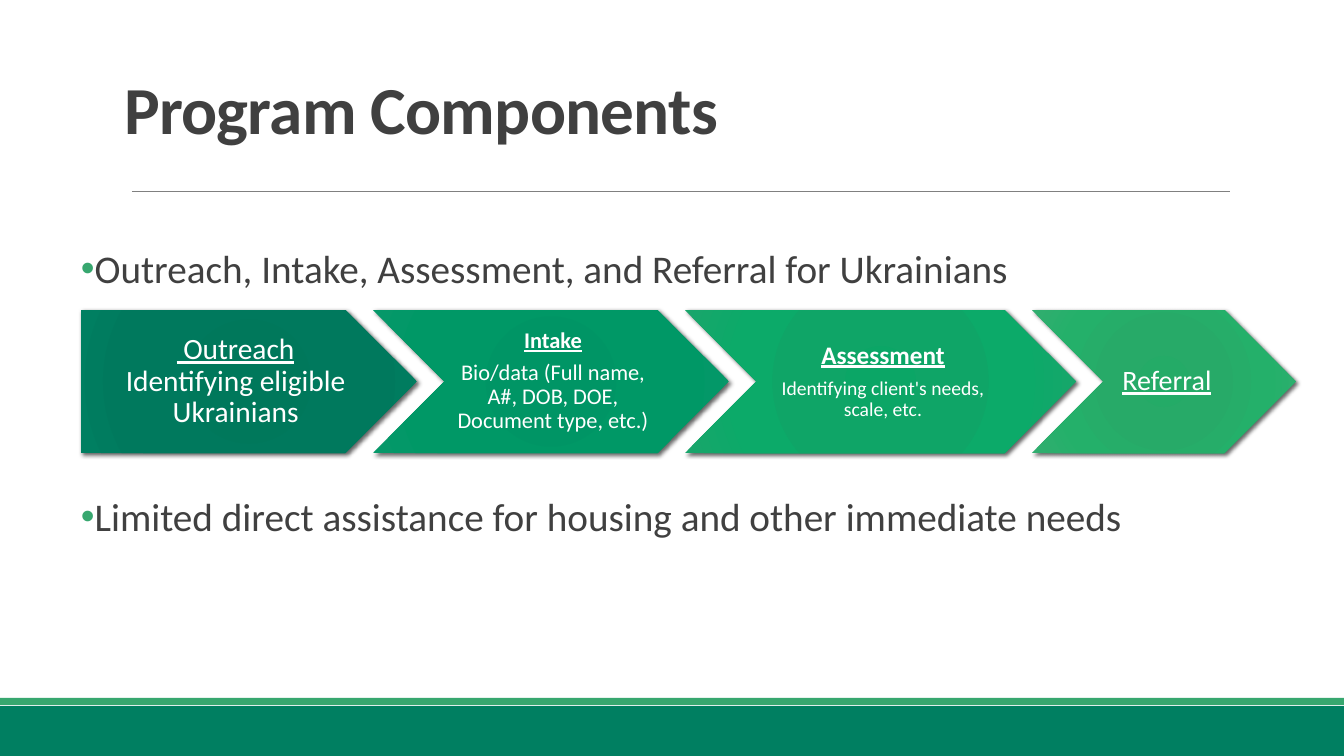
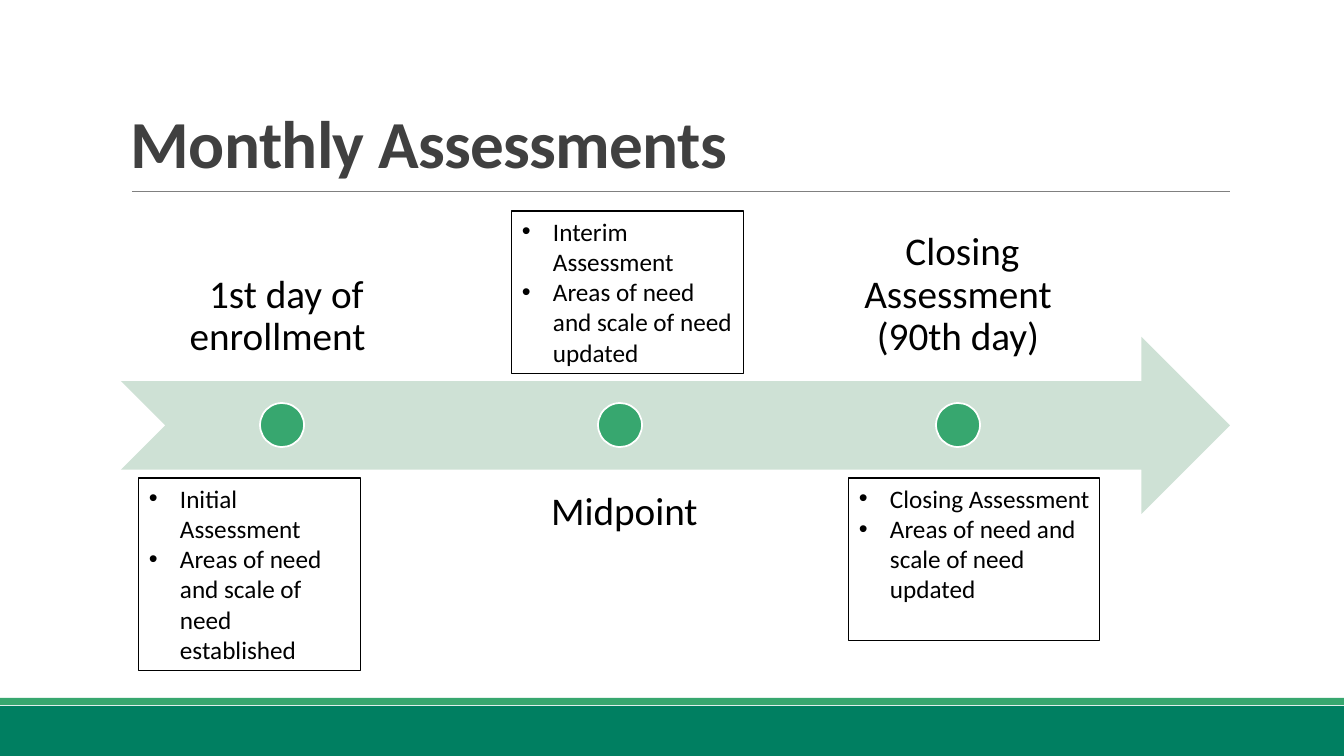
from dataclasses import dataclass

from lxml.etree import SubElement
from pptx import Presentation
from pptx.dml.color import RGBColor
from pptx.enum.shapes import MSO_CONNECTOR, MSO_SHAPE
from pptx.enum.text import MSO_ANCHOR, MSO_AUTO_SIZE, PP_ALIGN
from pptx.oxml import parse_xml
from pptx.oxml.ns import nsdecls, qn
from pptx.util import Emu, Pt


@dataclass(frozen=True)
class Theme:
    font: str = "Calibri"
    bullet_font: str = "Arial"
    ink: str = "404040"
    black: str = "000000"
    white: str = "FFFFFF"
    rule: str = "808080"
    dark: str = "007F61"
    accent: str = "37A76F"
    pale: str = "CEE1D5"
    title_size: int = 48
    body_size: int = 28
    note_size: int = 18
    tight: float = 0.9
    after_ratio: float = 0.35


THEME = Theme()
PAGE_WIDTH, PAGE_HEIGHT = 1344, 756
EMU_PER_PX = 12192000 / PAGE_WIDTH
MARGIN_LEFT, CONTENT_WIDTH = 121, 1109


@dataclass(frozen=True)
class Step:
    width: int
    inset: int
    gradient: tuple
    lines: tuple  # (text, format) pairs


STEPS = (
    Step(336, 12, ("00765A", "00785B", "00795D", "007F61"), (
        (" Outreach", dict(size=21, underline=True, after=0)),
        ("Identifying eligible Ukrainians", dict(size=21)))),
    Step(356, 7, ("009464", "009565", "009866", "069869"), (
        ("Intake", dict(size=16, bold=True, underline=True)),
        ("Bio/data (Full name, A#, DOB, DOE, Document type, etc.)", dict(size=16)))),
    Step(391, 8, ("0BA666", "0FA567", "0CAA69", "19A56B"), (
        ("Assessment", dict(size=18, bold=True, underline=True)),
        ("Identifying client's needs, scale, etc.", dict(size=14)))),
    Step(264, 9, ("24AB67", "27AA68", "24B06A", "31AD6F"), (
        ("Referral", dict(size=20, underline=True)),)),
)

# Label, then the note's box and its items
MILESTONES = (
    (" 1st day of enrollment ", (139, 478, 222, 193),
     ("Initial Assessment", "Areas of need and scale of need established")),
    (" Midpoint", (512, 211, 232, 163),
     ("Interim Assessment", "Areas of need and scale of need updated")),
    (" Closing Assessment (90th day)", (849, 478, 251, 163),
     ("Closing Assessment", "Areas of need and scale of need updated")),
)


def px(length):
    return Emu(round(length * EMU_PER_PX))


def rgb(color):
    return RGBColor.from_string(color)


# Text
def set_frame(frame, anchor=MSO_ANCHOR.TOP, insets=(10, 5, 10, 5)):
    frame.word_wrap = True
    frame.vertical_anchor = anchor
    (frame.margin_left, frame.margin_top,
     frame.margin_right, frame.margin_bottom) = map(px, insets)
    return frame


def write(frame, text, size=THEME.body_size, color=THEME.black, bold=False,
          underline=False, align=PP_ALIGN.LEFT, line=1.0, after=0,
          tracking=0, hang=0, bullet_color=None):
    """Add a paragraph to the frame; a hang gives it a bullet."""
    para = frame.paragraphs[0]
    if para.runs:
        para = frame.add_paragraph()
    para.alignment = align
    para.line_spacing = line
    para.space_before = Pt(0)
    para.space_after = Pt(after)
    span = para.add_run()
    span.text = text
    font = span.font
    font.name, font.size = THEME.font, Pt(size)
    font.bold, font.underline = bold, underline
    font.color.rgb = rgb(color)
    if tracking:
        font._element.set("spc", str(tracking))
    if hang:
        format_element = para._p.get_or_add_pPr()
        format_element.set("marL", str(px(hang)))
        format_element.set("indent", str(-px(hang)))
        tint = SubElement(format_element, qn("a:buClr"))
        SubElement(tint, qn("a:srgbClr")).set("val", bullet_color or color)
        SubElement(format_element, qn("a:buFont")).set("typeface", THEME.bullet_font)
        SubElement(format_element, qn("a:buChar")).set("char", "•")


def add_text(page, area, text, anchor=MSO_ANCHOR.TOP, insets=(10, 5, 10, 5), **style):
    box = page.shapes.add_textbox(*map(px, area))
    write(set_frame(box.text_frame, anchor, insets), text, **style)


# Shapes
def add_shape(page, kind, area, fill=None, line=None, line_width=0.75):
    shape = page.shapes.add_shape(kind, *map(px, area))
    shape.shadow.inherit = False
    if fill:
        shape.fill.solid()
        shape.fill.fore_color.rgb = rgb(fill)
    else:
        shape.fill.background()
    if line:
        shape.line.color.rgb = rgb(line)
        shape.line.width = Pt(line_width)
    else:
        shape.line.fill.background()
    return shape


def add_radial_gradient(shape, colors):
    stops = "".join(
        f'<a:gs pos="{position}000"><a:srgbClr val="{color}"/></a:gs>'
        for position, color in zip((0, 34, 70, 100), colors))
    gradient = parse_xml(
        f'<a:gradFill {nsdecls("a")} rotWithShape="1"><a:gsLst>{stops}</a:gsLst>'
        '<a:path path="circle"><a:fillToRect l="100000" t="100000" r="100000" '
        'b="100000"/></a:path></a:gradFill>')
    properties = shape._element.spPr
    properties.replace(properties.find(qn("a:noFill")), gradient)


def add_drop_shadow(shape):
    effects = shape._element.spPr.find(qn("a:effectLst"))
    effects.append(parse_xml(
        f'<a:outerShdw {nsdecls("a")} blurRad="{Pt(3)}" dist="{Pt(2)}" dir="2700000" '
        f'rotWithShape="0"><a:srgbClr val="{THEME.black}"><a:alpha val="60000"/>'
        '</a:srgbClr></a:outerShdw>'))


def add_rule(page, left, right, y):
    rule = page.shapes.add_connector(
        MSO_CONNECTOR.STRAIGHT, px(left), px(y), px(right), px(y))
    rule.line.color.rgb = rgb(THEME.rule)
    rule.line.width = Pt(0.5)
    SubElement(rule._element.spPr, qn("a:effectLst"))


# Shared page: footer bands, rule and title
def add_page(deck, title, title_left, title_bottom):
    page = deck.slides.add_slide(deck.slide_layouts[6])
    add_shape(page, MSO_SHAPE.RECTANGLE, (0, 706, PAGE_WIDTH, 50), THEME.dark)
    add_shape(page, MSO_SHAPE.RECTANGLE, (0, 698, PAGE_WIDTH, 7), THEME.accent)
    add_rule(page, 132, 1230, 191)
    add_text(page, (title_left, title_bottom - 140, CONTENT_WIDTH, 140), title,
             anchor=MSO_ANCHOR.BOTTOM, size=THEME.title_size, color=THEME.ink,
             bold=True, line=0.85, tracking=-50)
    return page


# Process steps
def add_steps(page, left, top, height, overlap):
    for index, step in enumerate(STEPS):
        kind = MSO_SHAPE.CHEVRON if index else MSO_SHAPE.PENTAGON
        shape = add_shape(page, kind, (left, top, step.width, height))
        add_radial_gradient(shape, step.gradient)
        add_drop_shadow(shape)
        frame = set_frame(shape.text_frame, MSO_ANCHOR.MIDDLE, (step.inset, 5, 3, 5))
        for text, style in step.lines:
            spacing = dict(after=round(THEME.after_ratio * step.lines[0][1]["size"], 1))
            write(frame, text, color=THEME.white, align=PP_ALIGN.CENTER,
                  line=THEME.tight, **(spacing | style))
        left += step.width - overlap


# Timeline
def add_milestones(page, pitch, width, height, dot):
    middle = 425
    for index, (label, note_area, items) in enumerate(MILESTONES):
        left = MARGIN_LEFT + index * pitch
        above = index % 2 == 0
        add_text(page, (left, 204 if above else 470, width, height), label,
                 anchor=MSO_ANCHOR.BOTTOM if above else MSO_ANCHOR.TOP,
                 insets=(22, 22, 22, 22), align=PP_ALIGN.CENTER, line=THEME.tight)
        add_shape(page, MSO_SHAPE.OVAL,
                  (left + (width - dot) // 2, middle - dot // 2, dot, dot),
                  THEME.accent, THEME.white, 1.25)
        note = add_shape(page, MSO_SHAPE.RECTANGLE, note_area, line=THEME.black)
        frame = set_frame(note.text_frame)
        frame.auto_size = MSO_AUTO_SIZE.SHAPE_TO_FIT_TEXT
        for item in items:
            write(frame, item, size=THEME.note_size, hang=31)


def add_components_page(deck):
    page = add_page(deck, "Program Components", 114, 153)
    add_steps(page, left=81, top=310, height=143, overlap=44)
    for top, text in (
            (243, "Outreach, Intake, Assessment, and Referral for Ukrainians"),
            (491, "Limited direct assistance for housing and other immediate needs")):
        add_text(page, (71, top, CONTENT_WIDTH, 50), text, anchor=MSO_ANCHOR.MIDDLE,
                 insets=(10, 0, 10, 0), color=THEME.ink, hang=10,
                 bullet_color=THEME.accent)


def add_assessments_page(deck):
    page = add_page(deck, "Monthly Assessments", MARGIN_LEFT, 187)
    add_shape(page, MSO_SHAPE.NOTCHED_RIGHT_ARROW,
              (MARGIN_LEFT, 337, CONTENT_WIDTH, 177), THEME.pale)
    add_milestones(page, pitch=338, width=322, height=177, dot=44)


def main():
    deck = Presentation()
    deck.slide_width, deck.slide_height = px(PAGE_WIDTH), px(PAGE_HEIGHT)
    add_components_page(deck)
    add_assessments_page(deck)
    deck.save("out.pptx")


if __name__ == "__main__":
    main()
